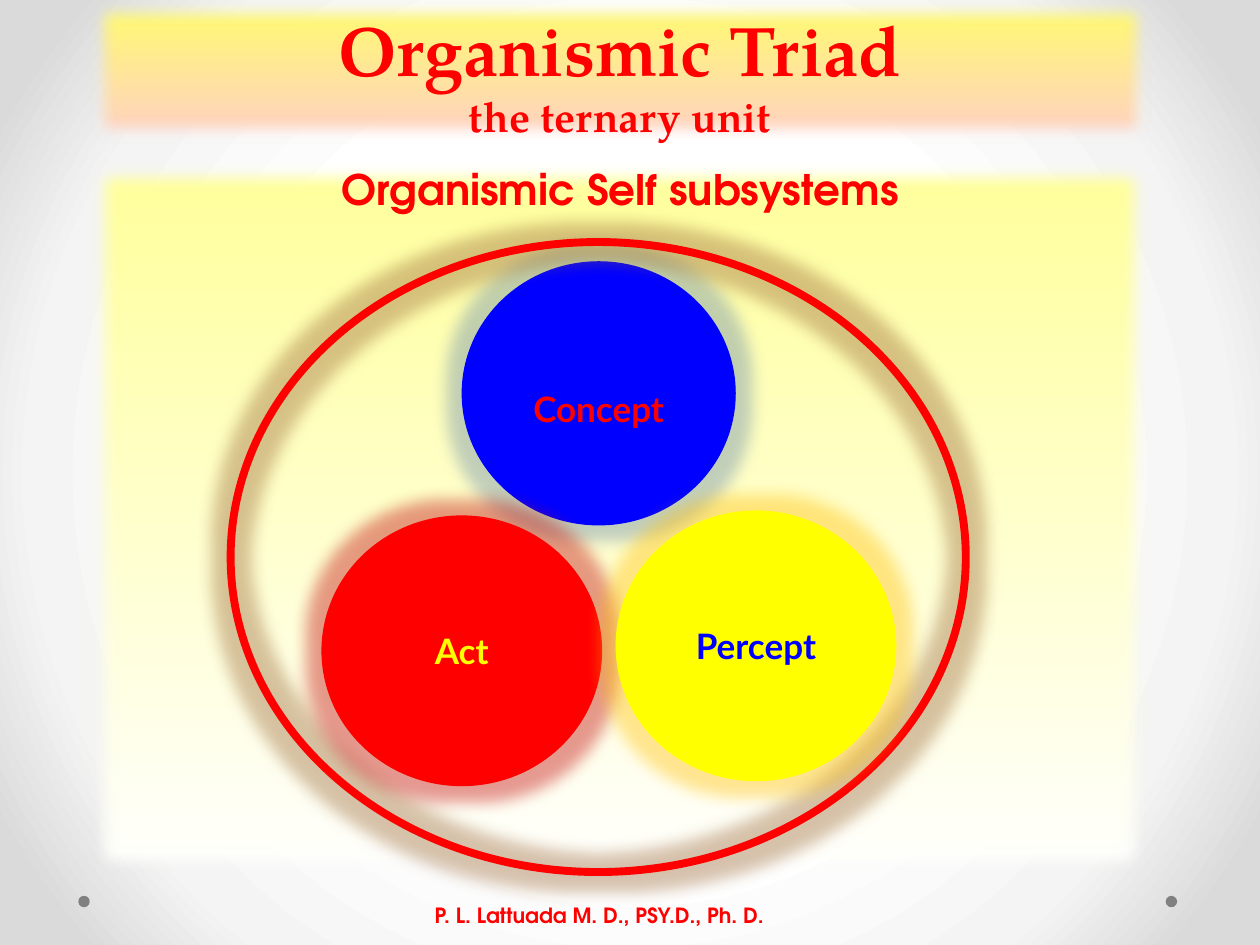
from lxml import etree
from pptx import Presentation
from pptx.dml.color import RGBColor
from pptx.enum.shapes import MSO_SHAPE
from pptx.enum.text import MSO_ANCHOR, PP_ALIGN
from pptx.oxml import parse_xml
from pptx.oxml.ns import qn
from pptx.util import Cm, Pt

RECTANGLE, OVAL = MSO_SHAPE.RECTANGLE, MSO_SHAPE.OVAL
TOP, MIDDLE, BOTTOM = MSO_ANCHOR.TOP, MSO_ANCHOR.MIDDLE, MSO_ANCHOR.BOTTOM
LEFT, CENTER = PP_ALIGN.LEFT, PP_ALIGN.CENTER
DRAWING_NS = "http://schemas.openxmlformats.org/drawingml/2006/main"
SERIF, SANS, LABEL = "TeX Gyre Pagella", "TeX Gyre Adventor", "Lato"
COLORS = {
    "red": "FF0000", "blue": "0000FF", "yellow": "FFFF00", "gray": "808080",
    "lemon": "FFFF66", "rose": "FFCCCC", "cream": "FFFF99", "white": "FFFFFF",
    "mist": "F4F4F4", "silver": "DADADA", "brown glow": "996633",
    "blue glow": "6688AA", "red glow": "C00000", "amber glow": "FFBF00",
}


class TriadSlide:
    """Draws the parts of the triad on one slide in a shared style."""

    def __init__(self, slide):
        self.slide = slide

    def color(self, name):
        return RGBColor.from_string(COLORS[name])

    def backdrop(self, stops):
        fill = self.slide.background.fill
        fill.solid()
        properties = self.slide.background._cSld.bg.bgPr
        properties.remove(properties.find(qn("a:solidFill")))
        marks = "".join(
            f'<a:gs pos="{percent * 1000}"><a:srgbClr val="{COLORS[name]}"/></a:gs>'
            for percent, name in stops)
        properties.insert(0, parse_xml(
            f'<a:gradFill xmlns:a="{DRAWING_NS}" rotWithShape="1">'
            f'<a:gsLst>{marks}</a:gsLst><a:path path="circle">'
            '<a:fillToRect l="50000" t="50000" r="50000" b="50000"/>'
            '</a:path></a:gradFill>'))

    def shape(self, kind, box):
        shape = self.slide.shapes.add_shape(kind, *map(Cm, box))
        shape.shadow.inherit = False
        return shape

    def effect(self, shape, tag, radius):
        effects = shape._element.spPr.find(qn("a:effectLst"))
        return etree.SubElement(effects, qn(tag), rad=str(int(radius)))

    def panel(self, box, top, bottom):
        panel = self.shape(RECTANGLE, box)
        panel.fill.gradient()
        panel.fill.gradient_angle = 270
        for stop, name, position in zip(panel.fill.gradient_stops, (top, bottom), (0, 1)):
            stop.color.rgb = self.color(name)
            stop.position = position
        panel.line.fill.background()
        self.effect(panel, "a:softEdge", Pt(10))
        return panel

    def oval(self, box, fill=None, line=None, width=4.5, glow=None):
        oval = self.shape(OVAL, box)
        if fill:
            oval.fill.solid()
            oval.fill.fore_color.rgb = self.color(fill)
        else:
            oval.fill.background()
        if line:
            oval.line.color.rgb = self.color(line)
            oval.line.width = Pt(width)
        else:
            oval.line.fill.background()
        if glow:
            halo = self.effect(oval, "a:glow", Pt(18))
            tint = etree.SubElement(halo, qn("a:srgbClr"), val=COLORS[glow])
            etree.SubElement(tint, qn("a:alpha"), val="40000")
        return oval

    def lettering(self, shape, lines, font, color, anchor=MIDDLE, align=CENTER, wrap=True):
        frame = shape.text_frame
        frame.word_wrap = wrap
        frame.vertical_anchor = anchor
        paragraph = frame.paragraphs[0]
        paragraph.alignment = align
        for index, (words, size) in enumerate(lines):
            if index:
                paragraph.add_line_break()
            run = paragraph.add_run()
            run.text = words
            run.font.name = font
            run.font.size = Pt(size)
            run.font.bold = True
            run.font.color.rgb = self.color(color)
        return frame

    def caption(self, box, words, size):
        caption = self.slide.shapes.add_textbox(*map(Cm, box))
        frame = self.lettering(caption, [(words, size)], SANS, "red", align=LEFT)
        frame.margin_left = Cm(0.08)
        frame.margin_right = Cm(0.13)


def main():
    deck = Presentation()
    deck.slide_width, deck.slide_height = Cm(25.4), Cm(19.05)
    triad = TriadSlide(deck.slides.add_slide(deck.slide_layouts[6]))
    triad.backdrop([(50, "white"), (76, "mist"), (92, "silver")])
    for dot_left in (23.5, 1.58):
        triad.oval((dot_left, 18.06, 0.23, 0.23), "gray")

    title = triad.panel((1.7, -0.13, 21.59, 3.1), "lemon", "rose")
    triad.lettering(title, [("Organismic Triad", 40), ("the ternary unit", 24)],
                    SERIF, "red", BOTTOM)
    subsystems = triad.panel((1.7, 3.18, 21.59, 14.6), "cream", "white")
    triad.lettering(subsystems, [("Organismic Self subsystems", 24)], SANS, "red", TOP)

    concept = triad.oval((9.32, 5.28, 5.5, 5.3), "blue", "blue", 0.75, "blue glow")
    label = triad.lettering(concept, [("Concept", 20)], LABEL, "red", wrap=False)
    label.margin_top = Cm(0.72)
    triad.oval((4.65, 4.88, 14.82, 12.7), line="red", glow="brown glow")
    for name, left, top, fill, ink, glow in (
            ("Act", 6.56, 10.47, "red", "yellow", "red glow"),
            ("Percept", 12.49, 10.37, "yellow", "blue", "amber glow")):
        circle = triad.oval((left, top, 5.5, 5.3), fill, fill, glow=glow)
        triad.lettering(circle, [(name, 20)], LABEL, ink, wrap=False)

    triad.caption((8.68, 17.86, 8.05, 1.19), "P. L. Lattuada M. D., PSY.D., Ph. D.", 12)
    deck.save("out.pptx")


if __name__ == "__main__":
    main()
